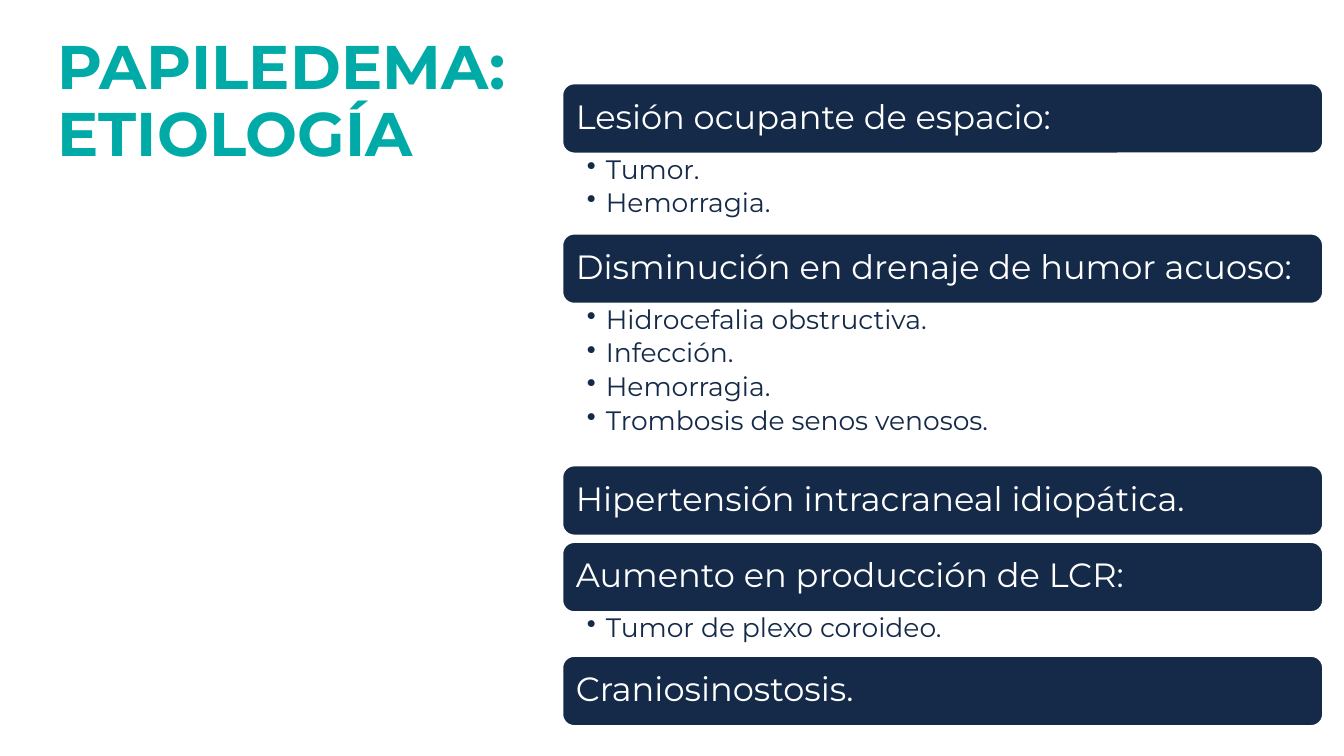
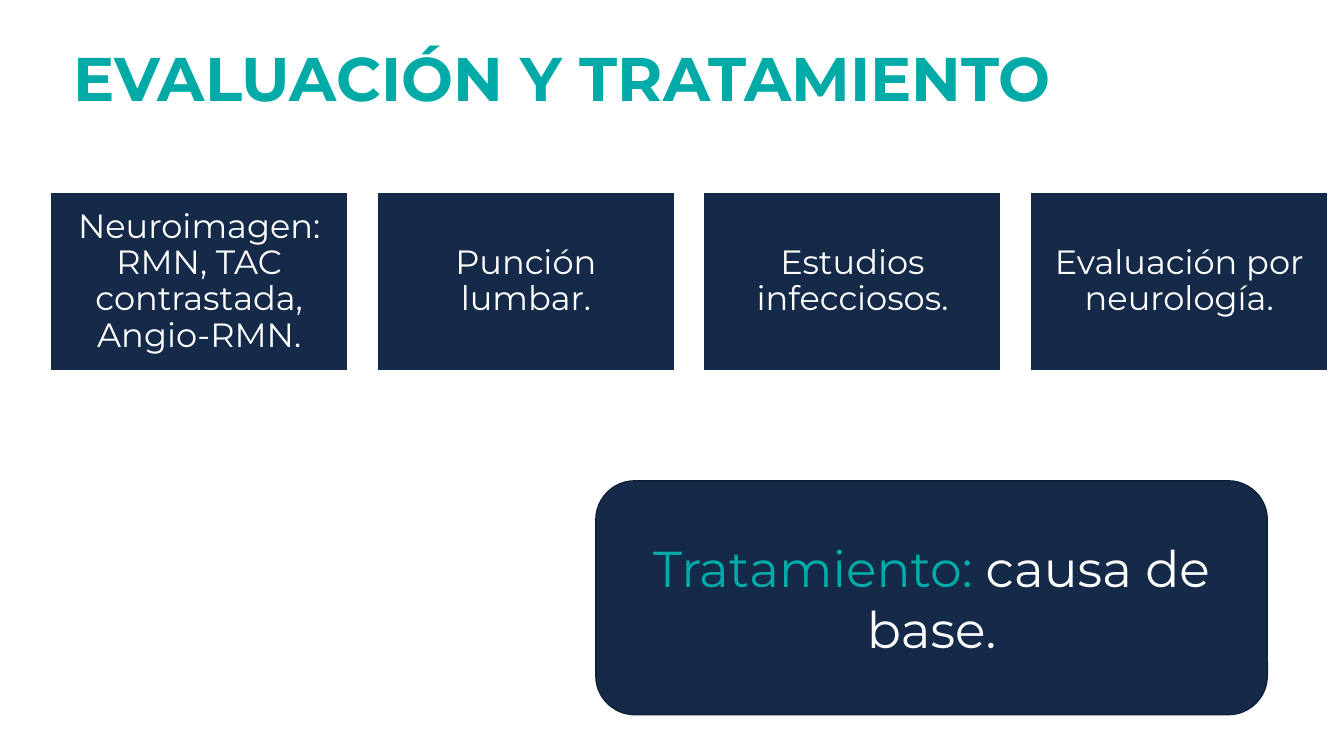
from dataclasses import dataclass

from lxml.etree import SubElement
from pptx import Presentation
from pptx.dml.color import RGBColor
from pptx.enum.shapes import MSO_SHAPE as Preset
from pptx.enum.text import MSO_ANCHOR as Anchor, MSO_AUTO_SIZE as AutoSize, PP_ALIGN as Align
from pptx.oxml.ns import qn
from pptx.util import Inches, Pt


@dataclass(frozen=True)
class Theme:
    font: str = "Montserrat"
    teal: RGBColor = RGBColor(0x00, 0xAA, 0xA7)
    navy: RGBColor = RGBColor(0x15, 0x2A, 0x48)
    edge: RGBColor = RGBColor(0x10, 0x1F, 0x35)
    white: RGBColor = RGBColor(0xFF, 0xFF, 0xFF)
    title_size: int = 44
    callout_size: int = 36
    heading_size: int = 24
    detail_size: int = 19
    tight: float = 0.9


THEME = Theme()

CAUSES = [
    ("Lesión ocupante de espacio:", ["Tumor.", "Hemorragia."], 0.8),
    (
        "Disminución en drenaje de humor acuoso:",
        ["Hidrocefalia obstructiva.", "Infección.", "Hemorragia.", "Trombosis de senos venosos."],
        1.61,
    ),
    ("Hipertensión intracraneal idiopática.", [], 0.07),
    ("Aumento en producción de LCR:", ["Tumor de plexo coroideo."], 0.44),
    ("Craniosinostosis.", [], 0),
]
STUDIES = [
    "Neuroimagen: RMN, TAC contrastada, Angio-RMN.",
    "Punción lumbar.",
    "Estudios infecciosos.",
    "Evaluación por neurología.",
]


def apply(target, values):
    for name, value in values.items():
        setattr(target, name, value)


class Deck:
    def __init__(self, theme):
        self.theme = theme
        self.prs = Presentation()
        apply(self.prs, {"slide_width": Inches(13.33), "slide_height": Inches(7.5)})
        self.slide = None

    def frame(self, shape, anchor, insets):
        frame = shape.text_frame
        sides = ("margin_left", "margin_top", "margin_right", "margin_bottom")
        apply(frame, dict(zip(sides, map(Inches, insets))))
        apply(frame, {"word_wrap": True, "auto_size": AutoSize.NONE, "vertical_anchor": anchor})
        return frame

    def add_runs(self, paragraph, parts, size, align=Align.LEFT, spacing=None, bold=False):
        apply(paragraph, {"alignment": align, "line_spacing": spacing or self.theme.tight})
        for text, color in parts:
            paragraph.add_run().text = text
            font = paragraph.runs[-1].font
            apply(font, {"name": self.theme.font, "size": Pt(size), "bold": bold})
            font.color.rgb = color

    def title(self, lines, box, anchor):
        self.slide = self.prs.slides.add_slide(self.prs.slide_layouts[5])
        title = self.slide.shapes.title
        apply(title, dict(zip(("left", "top", "width", "height"), map(Inches, box))))
        paragraph = self.frame(title, anchor, (0.1, 0.05, 0.1, 0.05)).paragraphs[0]
        for index, line in enumerate(lines):
            if index:
                paragraph.add_line_break()
            self.add_runs(paragraph, [(line, self.theme.teal)], self.theme.title_size, bold=True)

    def panel(self, preset, box, parts, size, align, edge, spacing=None):
        panel = self.slide.shapes.add_shape(preset, *map(Inches, box))
        panel.shadow.inherit = False
        panel.fill.solid()
        panel.fill.fore_color.rgb = self.theme.navy
        panel.line.color.rgb = edge
        panel.line.width = Pt(1)
        frame = self.frame(panel, Anchor.MIDDLE, (0.1, 0.1, 0.1, 0.1))
        self.add_runs(frame.paragraphs[0], parts, size, align, spacing)

    def heading(self, preset, box, text, align):
        theme = self.theme
        self.panel(preset, box, [(text, theme.white)], theme.heading_size, align, theme.white)

    def bullets(self, box, items):
        details = self.slide.shapes.add_textbox(*map(Inches, box))
        frame = self.frame(details, Anchor.TOP, (0.24, 0.03, 0.19, 0.03))
        for index, item in enumerate(items):
            paragraph = frame.add_paragraph() if index else frame.paragraphs[0]
            properties = paragraph._p.get_or_add_pPr()
            properties.set("marL", str(Inches(0.19)))
            properties.set("indent", str(Inches(-0.19)))
            SubElement(properties, qn("a:buChar")).set("char", "•")
            paragraph.space_after = Pt(3.5)
            self.add_runs(paragraph, [(item, self.theme.navy)], self.theme.detail_size)


def build_etiology(deck):
    deck.title(["PAPILEDEMA:", "ETIOLOGÍA"], (0.47, 0.21, 5.11, 1.52), Anchor.BOTTOM)
    left, top, width, height = 5.58, 0.83, 7.54, 0.69
    for cause, examples, room in CAUSES:
        deck.heading(Preset.ROUNDED_RECTANGLE, (left, top, width, height), cause, Align.LEFT)
        top += height
        if examples:
            deck.bullets((left, top, width, room), examples)
        top += room


def build_treatment(deck):
    theme = deck.theme
    deck.title(["EVALUACIÓN Y TRATAMIENTO"], (0.63, 0.28, 11.5, 1.06), Anchor.MIDDLE)
    for column, study in enumerate(STUDIES):
        box = (0.5 + 3.24 * column, 1.91, 2.95, 1.77)
        deck.heading(Preset.RECTANGLE, box, study, Align.CENTER)
    treatment = [("Tratamiento:", theme.teal), (" causa de base.", theme.white)]
    deck.panel(Preset.ROUNDED_RECTANGLE, (5.91, 4.77, 6.66, 2.32), treatment,
               theme.callout_size, Align.CENTER, theme.edge, spacing=1.0)


def main():
    deck = Deck(THEME)
    build_etiology(deck)
    build_treatment(deck)
    deck.prs.save("out.pptx")


if __name__ == "__main__":
    main()
